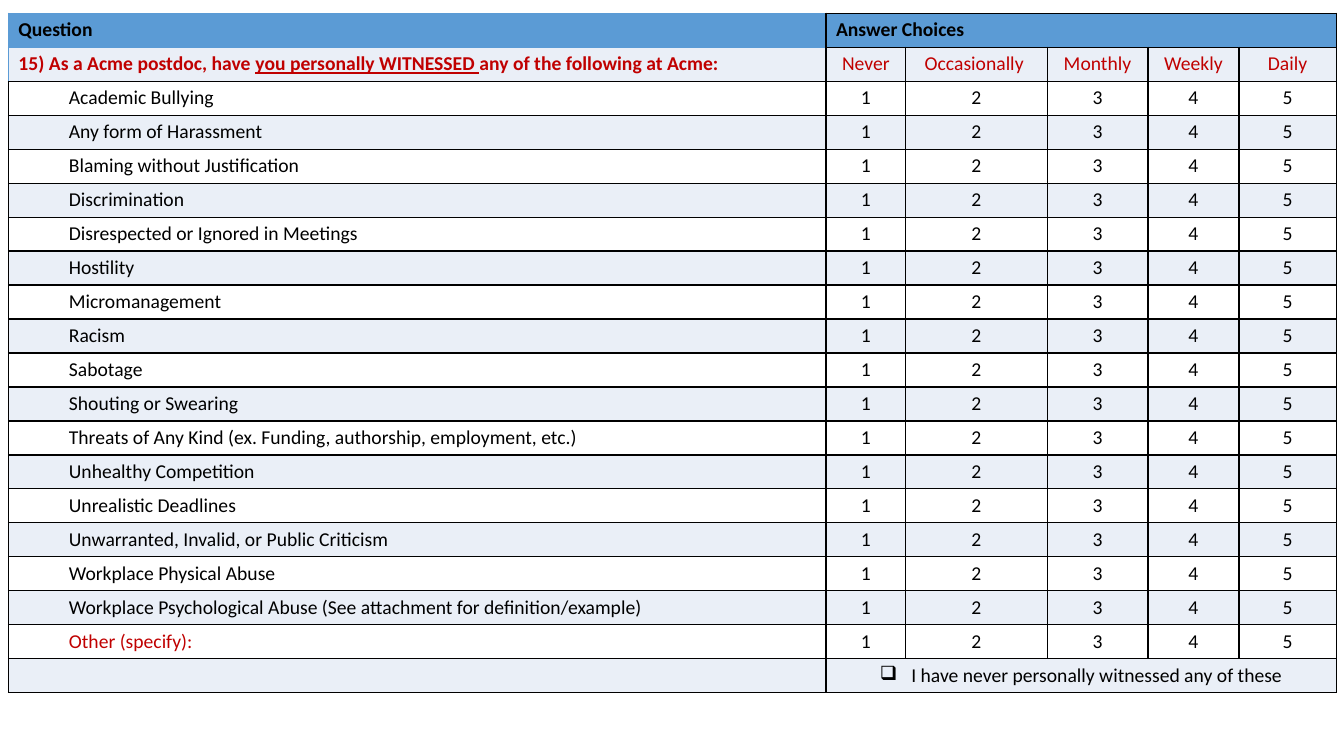
"""Build the survey question slide as one table of answer choices."""
from lxml import etree
from pptx import Presentation
from pptx.dml.color import RGBColor
from pptx.enum.text import PP_ALIGN
from pptx.oxml.ns import qn
from pptx.util import Pt

LEFT, CENTER = PP_ALIGN.LEFT, PP_ALIGN.CENTER
BLACK = RGBColor(0x00, 0x00, 0x00)
WHITE = RGBColor(0xFF, 0xFF, 0xFF)
RED = RGBColor(0xC0, 0x00, 0x00)
BLUE = RGBColor(0x5B, 0x9B, 0xD5)
PALE_BLUE = RGBColor(0xEA, 0xEF, 0xF7)

FONT = "Calibri"
TEXT_SIZE = 14
ROW_HEIGHT = 24.25
COLUMN_WIDTHS = (584, 57, 101, 72, 65, 69.5)
FREQUENCIES = ("Never", "Occasionally ", "Monthly", "Weekly", "Daily")
BEHAVIORS = (
    "Academic Bullying",
    "Any form of Harassment",
    "Blaming without Justification",
    "Discrimination",
    "Disrespected or Ignored in Meetings",
    "Hostility",
    "Micromanagement",
    "Racism",
    "Sabotage",
    "Shouting or Swearing",
    "Threats of Any Kind (ex. Funding, authorship, employment, etc.)",
    "Unhealthy Competition",
    "Unrealistic Deadlines",
    "Unwarranted, Invalid, or Public Criticism",
    "Workplace Physical Abuse",
    "Workplace Psychological Abuse (See attachment for definition/example)",
    "Other (specify):",
)


def write(cell, text, color=BLACK, bold=False, underline=False, align=LEFT):
    """Append one formatted run to the cell's paragraph."""
    paragraph = cell.text_frame.paragraphs[0]
    paragraph.alignment = align
    run = paragraph.add_run()
    run.text = text
    run.font.name = FONT
    run.font.size = Pt(TEXT_SIZE)
    run.font.bold = bold
    run.font.underline = underline
    run.font.color.rgb = color


def indent(cell, margin, first_line=0, bullet=None):
    """Indent the cell's paragraph and give it an optional bullet."""
    properties = cell.text_frame.paragraphs[0]._p.get_or_add_pPr()
    properties.set("marL", str(Pt(margin)))
    properties.set("indent", str(Pt(first_line)))
    if bullet:
        etree.SubElement(properties, qn("a:buChar"), char=bullet)


def style_cell(cell, fill, edges):
    """Set the cell's borders, fill and empty-line text size."""
    properties = cell._tc.get_or_add_tcPr()
    for side, color in edges.items():
        line = etree.SubElement(properties, qn(f"a:ln{side}"), w=str(Pt(1)))
        solid = etree.SubElement(line, qn("a:solidFill"))
        etree.SubElement(solid, qn("a:srgbClr"), val=str(color))
    cell.fill.solid()
    cell.fill.fore_color.rgb = fill
    paragraph = cell.text_frame.paragraphs[0]._p
    etree.SubElement(paragraph, qn("a:endParaRPr"), sz=str(TEXT_SIZE * 100))


def add_grid(slide, row_count):
    """Add the table with its column widths, row bands and borders."""
    frame = slide.shapes.add_table(
        row_count, len(COLUMN_WIDTHS), Pt(6), Pt(9.5),
        Pt(sum(COLUMN_WIDTHS)), Pt(ROW_HEIGHT * row_count))
    grid = frame.table
    grid.first_row = False
    grid.horz_banding = False
    for column, width in zip(grid.columns, COLUMN_WIDTHS):
        column.width = Pt(width)
    for row_index, row in enumerate(grid.rows):
        row.height = Pt(ROW_HEIGHT)
        band = PALE_BLUE if row_index % 2 else WHITE
        for column_index, cell in enumerate(row.cells):
            edges = dict.fromkeys("LRTB", BLACK)
            if column_index == 0 and row_index < 2:
                edges.update(L=BLUE, T=BLUE)
                if row_index == 0:
                    edges["B"] = BLUE
            style_cell(cell, BLUE if row_index == 0 else band, edges)
    for row_index in (0, row_count - 1):
        grid.cell(row_index, 1).merge(grid.cell(row_index, len(FREQUENCIES)))
    return grid


def fill_headings(grid):
    """Write the title row, the question and the frequency labels."""
    write(grid.cell(0, 0), "Question", bold=True)
    write(grid.cell(0, 1), "Answer Choices", bold=True)
    question = grid.cell(1, 0)
    write(question, "15) As a Acme postdoc, have ", color=RED, bold=True)
    write(question, "you personally WITNESSED ", color=RED, bold=True, underline=True)
    write(question, "any of the following at Acme:", color=RED, bold=True)
    for column, frequency in enumerate(FREQUENCIES, start=1):
        write(grid.cell(1, column), frequency, color=RED, align=CENTER)


def fill_answers(grid):
    """Write each behavior with its scale, then the opt-out choice."""
    for row, behavior in enumerate(BEHAVIORS, start=2):
        label = grid.cell(row, 0)
        write(label, behavior, color=RED if behavior == BEHAVIORS[-1] else BLACK)
        indent(label, 36)
        for score in range(1, len(FREQUENCIES) + 1):
            write(grid.cell(row, score), str(score), align=CENTER)
    opt_out = grid.cell(len(BEHAVIORS) + 2, 1)
    write(opt_out, "I have never personally witnessed any of these", align=CENTER)
    indent(opt_out, 22.5, first_line=-22.5, bullet="❑")


def main():
    """Create and save the presentation."""
    presentation = Presentation()
    presentation.slide_width = Pt(960)
    presentation.slide_height = Pt(540)
    slide = presentation.slides.add_slide(presentation.slide_layouts[6])
    grid = add_grid(slide, len(BEHAVIORS) + 3)
    fill_headings(grid)
    fill_answers(grid)
    presentation.save("out.pptx")


if __name__ == "__main__":
    main()
